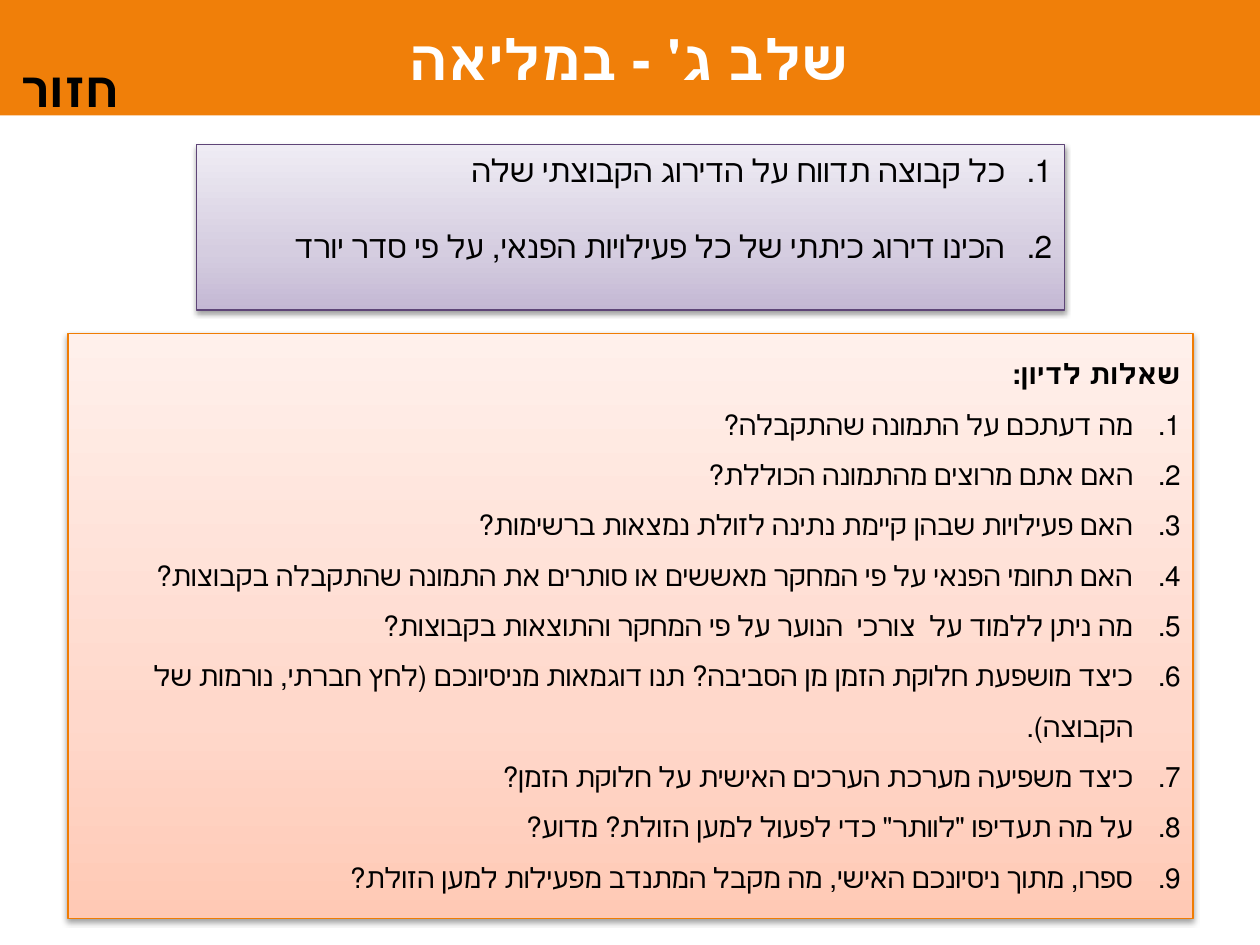
from copy import deepcopy

from lxml.etree import SubElement
from pptx import Presentation
from pptx.dml.color import RGBColor
from pptx.enum.lang import MSO_LANGUAGE_ID as Language
from pptx.enum.shapes import MSO_SHAPE as Shape
from pptx.enum.text import MSO_ANCHOR as Anchor, PP_ALIGN as Align
from pptx.oxml.ns import qn
from pptx.util import Cm, Pt

COLORS = {
    "banner": "F07F09",
    "white": "FFFFFF",
    "black": "000000",
    "purple line": "5E4577",
    "orange line": "F07C03",
}
PURPLE_STOPS = [(0, "C4B8D4"), (0.35, "D5CDE0"), (1, "EFECF4")]
ORANGE_STOPS = [(0, "FFC9B5"), (0.35, "FFD8CB"), (1, "FFF0EB")]

TASKS = [
    "כל קבוצה תדווח על הדירוג הקבוצתי שלה",
    "הכינו דירוג כיתתי של כל פעילויות הפנאי, על פי סדר יורד",
]
QUESTIONS = [
    "מה דעתכם על התמונה שהתקבלה?",
    "האם אתם מרוצים מהתמונה הכוללת?",
    "האם פעילויות שבהן קיימת נתינה לזולת נמצאות ברשימות?",
    "האם תחומי הפנאי על פי המחקר מאששים או סותרים את התמונה שהתקבלה בקבוצות?",
    "מה ניתן ללמוד על  צורכי  הנוער על פי המחקר והתוצאות בקבוצות?",
    "כיצד מושפעת חלוקת הזמן מן הסביבה? תנו דוגמאות מניסיונכם (לחץ חברתי, נורמות של הקבוצה).",
    "כיצד משפיעה מערכת הערכים האישית על חלוקת הזמן?",
    "על מה תעדיפו \"לוותר\" כדי לפעול למען הזולת? מדוע?",
    "ספרו, מתוך ניסיונכם האישי, מה מקבל המתנדב מפעילות למען הזולת?",
]


def rgb(name):
    return RGBColor.from_string(COLORS[name])


def add_paragraph(frame, text, size, font="Calibri", color="black", bold=False,
                  align=Align.RIGHT, spacing=1.0, after=0):
    """Add a right-to-left paragraph, using the empty first one if it is free."""
    first = frame.paragraphs[0]
    paragraph = frame.add_paragraph() if first.runs else first
    paragraph.alignment = align
    paragraph.line_spacing = spacing
    paragraph.space_after = Pt(after)
    paragraph._p.get_or_add_pPr().set("rtl", "1")
    run = paragraph.add_run()
    run.text = text
    run.font.name = font
    run.font.size = Pt(size)
    run.font.bold = bold
    run.font.color.rgb = rgb(color)
    run.font.language_id = Language.HEBREW
    return paragraph


def number(paragraph):
    properties = paragraph._p.get_or_add_pPr()
    properties.set("marL", str(Cm(0.95)))
    properties.set("indent", str(-Cm(0.95)))
    SubElement(properties, qn("a:buFont"), typeface="+mj-lt")
    SubElement(properties, qn("a:buAutoNum"), type="arabicPeriod")


def add_numbered_list(frame, items, size, spacing=1.0, gap=0):
    for item in items:
        number(add_paragraph(frame, item, size, spacing=spacing, after=gap))


def fill_gradient(shape, stops):
    """Fill with three stops running from the bottom to the top."""
    fill = shape.fill
    fill.gradient()
    fill.gradient_angle = 90
    stop_list = shape._element.spPr.find(qn("a:gradFill")).find(qn("a:gsLst"))
    stop_list.append(deepcopy(stop_list[0]))
    for stop, (position, color) in zip(fill.gradient_stops, stops):
        stop.position = position
        stop.color.rgb = RGBColor.from_string(color)


def add_soft_shadow(shape):
    shape.shadow.inherit = False
    effects = shape._element.spPr.find(qn("a:effectLst"))
    shadow = SubElement(effects, qn("a:outerShdw"), blurRad="40000", dist="20000",
                        dir="5400000", rotWithShape="0")
    color = SubElement(shadow, qn("a:srgbClr"), val=COLORS["black"])
    SubElement(color, qn("a:alpha"), val="38000")


def add_panel(slide, left, top, width, height, stops, line):
    shape = slide.shapes.add_shape(Shape.RECTANGLE, Cm(left), Cm(top), Cm(width), Cm(height))
    fill_gradient(shape, stops)
    shape.line.color.rgb = rgb(line)
    shape.line.width = Pt(0.75)
    add_soft_shadow(shape)
    frame = shape.text_frame
    frame.word_wrap = True
    frame.vertical_anchor = Anchor.TOP
    return frame


def add_banner(slide, title):
    shape = slide.shapes.add_shape(Shape.RECTANGLE, Cm(-0.02), 0, Cm(25.42), Cm(2.33))
    shape.fill.solid()
    shape.fill.fore_color.rgb = rgb("banner")
    shape.line.fill.background()
    shape.shadow.inherit = False
    shape.text_frame.vertical_anchor = Anchor.MIDDLE
    add_paragraph(shape.text_frame, title, 32, "Cabin", "white", True, Align.CENTER)


def add_back_label(slide, text):
    box = slide.shapes.add_textbox(Cm(-0.08), Cm(-0.13), Cm(2.97), Cm(2.26))
    box.text_frame.word_wrap = True
    add_paragraph(box.text_frame, text, 28, "Cabin", "black", True, Align.CENTER, spacing=2.0)


def main():
    presentation = Presentation()
    presentation.slide_width = Cm(25.4)
    presentation.slide_height = Cm(19.05)
    slide = presentation.slides.add_slide(presentation.slide_layouts[6])

    add_banner(slide, "שלב ג' - במליאה")
    add_back_label(slide, "חזור")

    tasks = add_panel(slide, 3.96, 2.92, 17.5, 3.33, PURPLE_STOPS, "purple line")
    add_numbered_list(tasks, TASKS, 18, gap=22)

    discussion = add_panel(slide, 1.37, 6.73, 22.68, 11.79, ORANGE_STOPS, "orange line")
    add_paragraph(discussion, "שאלות לדיון:", 16, bold=True, spacing=1.5)
    add_numbered_list(discussion, QUESTIONS, 16, spacing=1.5)

    presentation.save("out.pptx")


if __name__ == "__main__":
    main()
